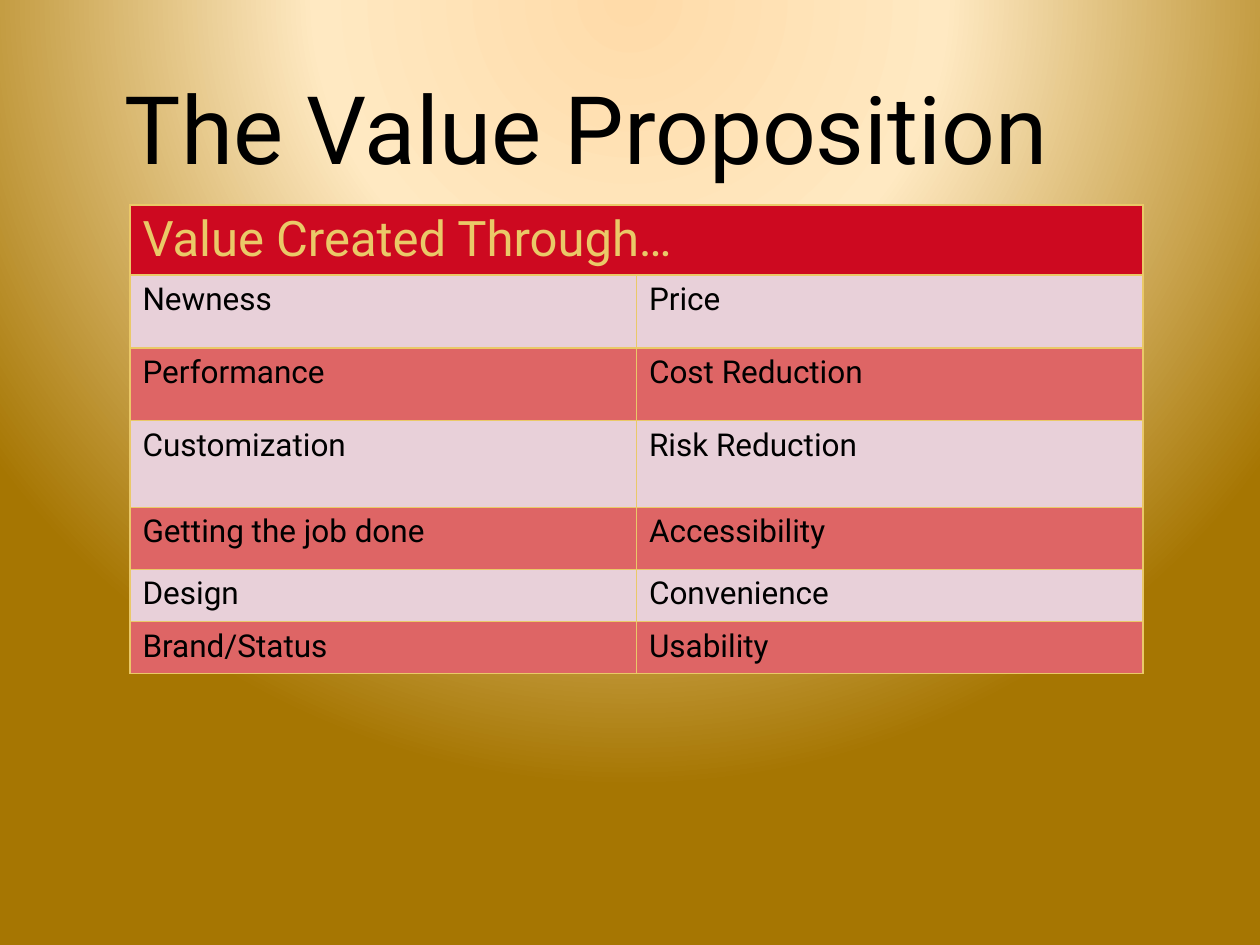
from dataclasses import dataclass

from pptx import Presentation
from pptx.dml.color import RGBColor
from pptx.enum.text import MSO_ANCHOR as Anchor, PP_ALIGN as Align
from pptx.oxml import parse_xml
from pptx.oxml.ns import nsdecls
from pptx.slide import Slide
from pptx.util import Cm, Pt


def color(value):
    """Turn a hex string into a colour."""
    return RGBColor.from_string(value)


@dataclass
class ValuePage:
    """Hold the style and the slide being built."""
    page: Slide
    font: str = "Roboto"
    ink: str = "000000"
    gold: str = "EAC968"
    header: str = "CD0920"
    bands: tuple = ("E8D0D9", "DE6565")

    def background(self, stops):
        """Fill the page with a circular gradient centred above it."""
        marks = "".join(
            f'<a:gs pos="{position * 1000}"><a:srgbClr val="{value}"/></a:gs>'
            for position, value in stops)
        self.page.element.cSld.insert(0, parse_xml(
            f'<p:bg {nsdecls("p", "a")}><p:bgPr><a:gradFill rotWithShape="1">'
            f'<a:gsLst>{marks}</a:gsLst><a:path path="circle">'
            '<a:fillToRect l="50000" t="-80000" r="50000" b="180000"/></a:path>'
            '</a:gradFill><a:effectLst/></p:bgPr></p:bg>'))

    def label(self, frame, text, size, ink, align=Align.LEFT):
        """Put one formatted paragraph in a text frame."""
        frame.text = text
        para = frame.paragraphs[0]
        para.alignment = align
        para.font.name = self.font
        para.font.size = Pt(size)
        para.font.bold = False
        para.font.color.rgb = color(ink)

    def title(self, text):
        """Place and format the title, set slightly left of centre."""
        box = self.page.shapes.title
        box.left, box.top, box.width, box.height = Cm(1.27), Cm(0.76), Cm(22.86), Cm(3.18)
        frame = box.text_frame
        frame.word_wrap = True
        frame.vertical_anchor = Anchor.BOTTOM
        frame.margin_left = frame.margin_top = frame.margin_bottom = Cm(0.25)
        frame.margin_right = Cm(2)
        self.label(frame, text, 54, self.ink, Align.CENTER)

    def cell(self, cell, fill):
        """Give a cell its borders and fill."""
        properties = cell._tc.get_or_add_tcPr()
        for side in "LRTB":
            properties.append(parse_xml(
                f'<a:ln{side} {nsdecls("a")} w="12700"><a:solidFill>'
                f'<a:srgbClr val="{self.gold}"/></a:solidFill></a:ln{side}>'))
        cell.fill.solid()
        cell.fill.fore_color.rgb = color(fill)

    def table(self, heading, rows, heights):
        """Draw a banded table under one merged heading."""
        table = self.page.shapes.add_table(
            len(heights), 2, Cm(2.62), Cm(4.13), Cm(20.42), Cm(sum(heights))).table
        for row, height in zip(table.rows, heights):
            row.height = Cm(height)
        for cell in table.rows[0].cells:
            self.cell(cell, self.header)
        table.cell(0, 0).merge(table.cell(0, 1))
        self.label(table.cell(0, 0).text_frame, heading, 28, self.gold)
        for index, texts in enumerate(rows):
            for cell, text in zip(table.rows[index + 1].cells, texts):
                self.cell(cell, self.bands[index % 2])
                self.label(cell.text_frame, text, 18, self.ink)


def main():
    """Build and save the slide."""
    deck = Presentation()
    deck.slide_width, deck.slide_height = Cm(25.4), Cm(19.05)
    page = ValuePage(deck.slides.add_slide(deck.slide_layouts[5]))
    page.background([(0, "FFDBA9"), (40, "FFE9C2"), (100, "A67602")])
    page.title("The Value Proposition")
    page.table(
        "Value Created Through…",
        [("Newness", "Price"),
         ("Performance", "Cost Reduction"),
         ("Customization", "Risk Reduction"),
         ("Getting the job done", "Accessibility"),
         ("Design", "Convenience"),
         ("Brand/Status", "Usability")],
        [1.4, 1.47, 1.47, 1.75, 1.25, 1.05, 1.05])
    deck.save("out.pptx")


if __name__ == "__main__":
    main()
